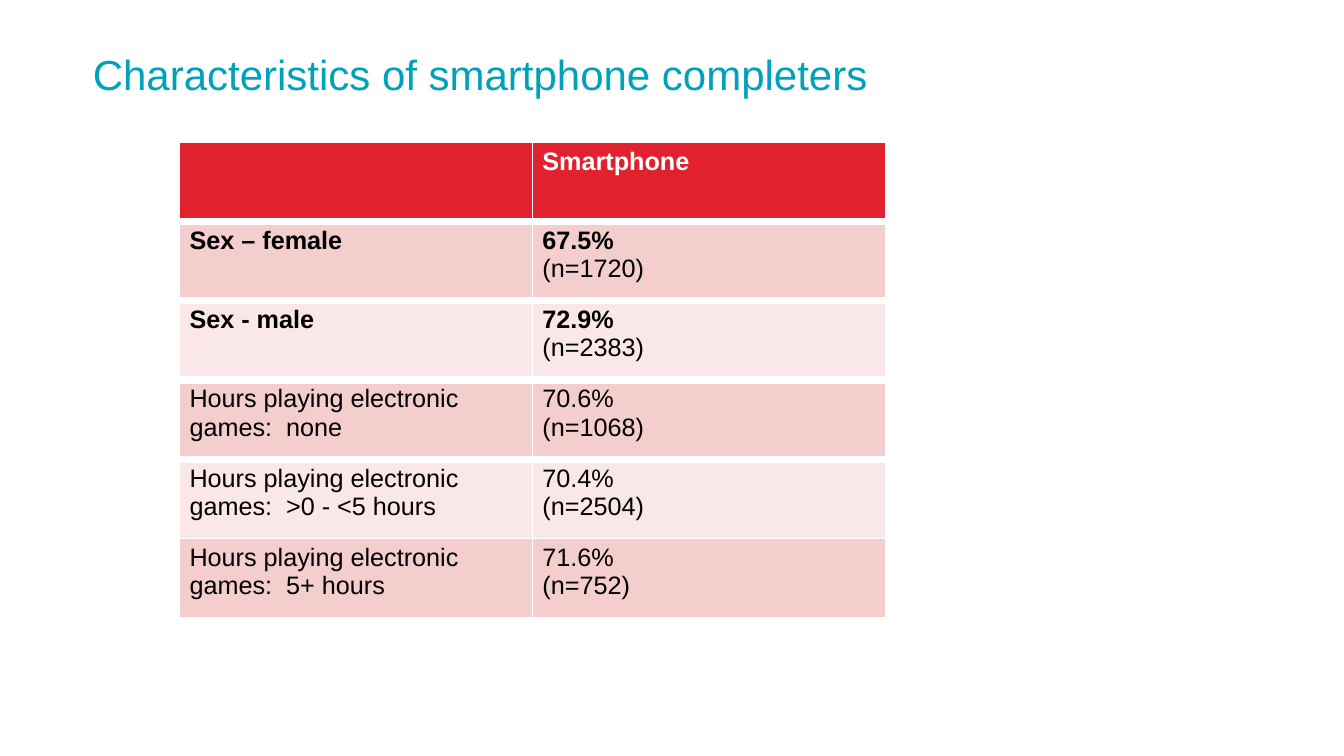
from typing import NamedTuple

from lxml.etree import SubElement
from pptx import Presentation
from pptx.dml.color import RGBColor
from pptx.enum.text import MSO_ANCHOR, PP_ALIGN
from pptx.oxml.ns import qn
from pptx.util import Inches, Pt

FONT = "Arial"
TEAL, RED, WHITE, BLACK = "00A1BA", "E2212F", "FFFFFF", "000000"
BANDS = ("F4CDCD", "FAE8E8")
THIN, THICK = 1, 6
THICK_EDGES = {1, 2, 3, 4}  # horizontal edges, counted from the table top


class Group(NamedTuple):
    label: str
    share: str
    count: str
    bold: bool = False


GROUPS = [
    Group("Sex – female", "67.5%", "(n=1720)", True),
    Group("Sex - male", "72.9%", "(n=2383)", True),
    Group("Hours playing electronic games:  none", "70.6%", "(n=1068)"),
    Group("Hours playing electronic games:  >0 - <5 hours", "70.4%", "(n=2504)"),
    Group("Hours playing electronic games:  5+ hours", "71.6%", "(n=752)"),
]


def rgb(color: str) -> RGBColor:
    return RGBColor.from_string(color)


def set_font(p, size: float, color: str, bold: bool = False) -> None:
    p.font.name, p.font.size, p.font.bold = FONT, Pt(size), bold
    p.font.color.rgb = rgb(color)


def set_borders(cell, top: float, bottom: float) -> None:
    tc_pr = cell._tc.get_or_add_tcPr()
    for side, width in (("L", THIN), ("R", THIN), ("T", top), ("B", bottom)):
        ln = SubElement(tc_pr, qn(f"a:ln{side}"), w=str(Pt(width)))
        SubElement(SubElement(ln, qn("a:solidFill")), qn("a:srgbClr"), val=WHITE)


def fill_cell(cell, row: int, lines: list[tuple[str, bool]], fill: str, color: str) -> None:
    top, bottom = (THICK if edge in THICK_EDGES else THIN for edge in (row, row + 1))
    set_borders(cell, top, bottom)
    cell.fill.solid()
    cell.fill.fore_color.rgb = rgb(fill)
    tf = cell.text_frame
    tf.text = "\n".join(text for text, _ in lines)
    for p, (_, bold) in zip(tf.paragraphs, lines):
        set_font(p, 18, color, bold)


def add_title(s, text: str) -> None:
    sp = s.shapes.title
    sp.left, sp.top, sp.width, sp.height = map(Inches, (0.92, 0.54, 11.5, 0.87))
    tf = sp.text_frame
    tf.margin_left = tf.margin_top = tf.margin_right = tf.margin_bottom = 0
    tf.vertical_anchor = MSO_ANCHOR.TOP
    tf.text = text
    p = tf.paragraphs[0]
    p.alignment, p.line_spacing = PP_ALIGN.LEFT, 0.9
    set_font(p, 30, TEAL)


def add_completers_table(s, groups: list[Group]) -> None:
    table = s.shapes.add_table(
        len(groups) + 1, 2, Inches(1.78), Inches(1.41), Inches(7), Inches(4.72)
    ).table
    # Header row
    for col, heading in enumerate(("", "Smartphone")):
        fill_cell(table.cell(0, col), 0, [(heading, True)], RED, WHITE)
    # One banded row per group
    for row, group in enumerate(groups, start=1):
        band = BANDS[(row - 1) % 2]
        label = [(group.label, group.bold)]
        values = [(group.share, group.bold), (group.count, False)]
        for col, lines in enumerate((label, values)):
            fill_cell(table.cell(row, col), row, lines, band, BLACK)


def main() -> None:
    prs = Presentation()
    prs.slide_width, prs.slide_height = Inches(13.33), Inches(7.5)
    s = prs.slides.add_slide(prs.slide_layouts[5])
    add_title(s, "Characteristics of smartphone completers")
    add_completers_table(s, GROUPS)
    prs.save("out.pptx")


if __name__ == "__main__":
    main()
